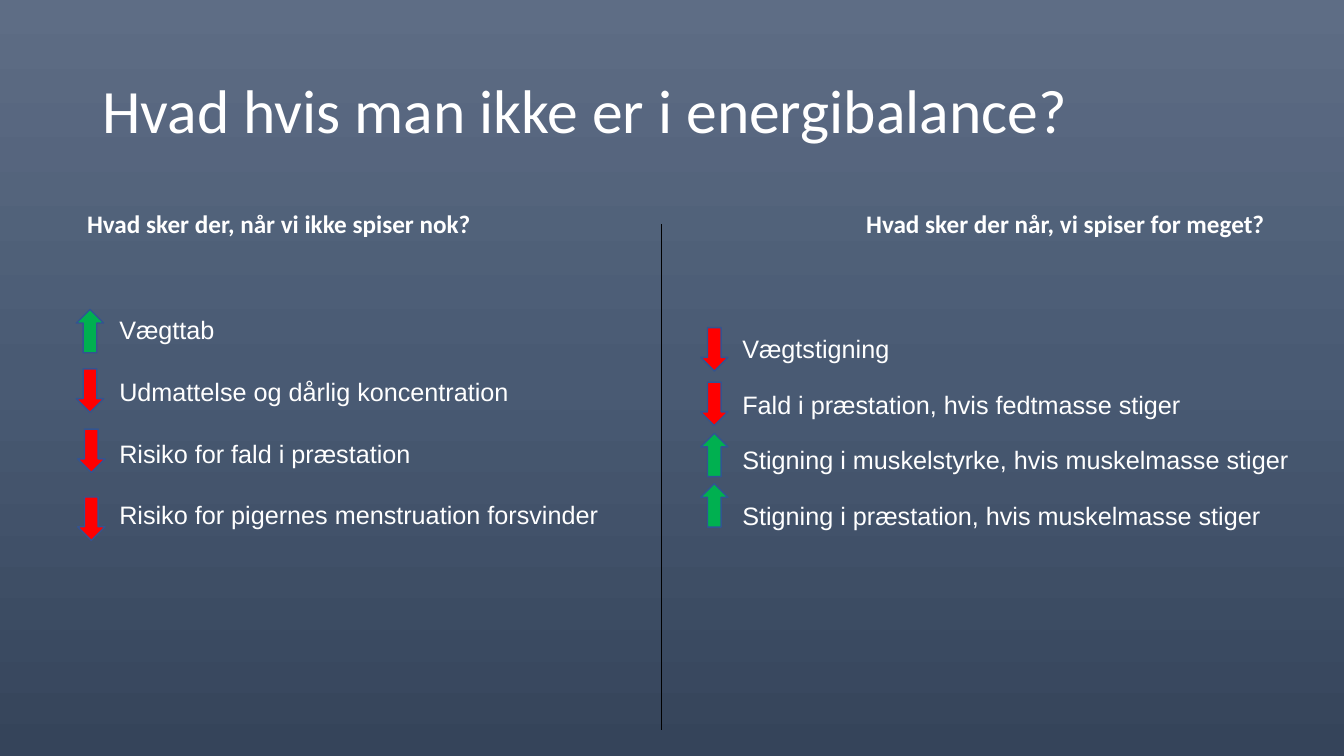
from copy import deepcopy

from lxml import etree
from pptx import Presentation
from pptx.dml.color import RGBColor
from pptx.enum import shapes, text
from pptx.oxml import ns
from pptx.util import Pt

WHITE = RGBColor(0xFF, 0xFF, 0xFF)
BLACK = RGBColor(0x00, 0x00, 0x00)
GREEN = RGBColor(0x00, 0xB0, 0x50)
RED = RGBColor(0xFF, 0x00, 0x00)
OUTLINE = RGBColor(0x32, 0x54, 0x91)
BACKGROUND = (
    RGBColor(0x5E, 0x6D, 0x85),
    RGBColor(0x49, 0x5A, 0x73),
    RGBColor(0x35, 0x44, 0x5A),
)
COMPARISON_LAYOUT = 4
INDENT = Pt(22.5)


def paint_background(page):
    fill = page.background.fill
    fill.gradient()
    fill.gradient_angle = 270
    stop_list = page.element.find(".//" + ns.qn("a:gsLst"))
    stop_list.insert(1, deepcopy(stop_list[0]))
    for index, (stop, color) in enumerate(zip(fill.gradient_stops, BACKGROUND)):
        stop.position = index / 2
        stop.color.rgb = color


def place(box, left, top, width, height, anchor, wrap=True):
    box.left, box.top, box.width, box.height = map(Pt, (left, top, width, height))
    frame = box.text_frame
    frame.auto_size = text.MSO_AUTO_SIZE.NONE
    frame.vertical_anchor = anchor
    frame.word_wrap = wrap
    return frame


def write(para, words, size, font_name, bold=False):
    para.alignment = text.PP_ALIGN.LEFT
    para.space_before = Pt(0)
    span = para.add_run()
    span.text = words
    span.font.size = Pt(size)
    span.font.name = font_name
    span.font.bold = bold
    span.font.color.rgb = WHITE


def add_heading(box, words, left, width):
    frame = place(box, left, 145.5, width, 29, text.MSO_ANCHOR.TOP, wrap=False)
    write(frame.paragraphs[0], words, 18, "Calibri", bold=True)


def add_list(box, items, bounds, gap, line_spacing):
    frame = place(box, *bounds, text.MSO_ANCHOR.TOP)
    for index, words in enumerate(items):
        para = frame.add_paragraph() if index else frame.paragraphs[0]
        properties = para._p.get_or_add_pPr()
        properties.set("marL", str(INDENT))
        properties.set("indent", str(-INDENT))
        write(para, words, 18, "Arial")
        para.line_spacing = line_spacing
        if index:
            para.space_before = Pt(gap)


def add_arrow(page, left, top, rising):
    arrow = page.shapes.add_shape(
        shapes.MSO_SHAPE.UP_ARROW, Pt(left), Pt(top), Pt(19.5), Pt(31))
    arrow.shadow.inherit = False
    arrow.rotation = 0 if rising else 180
    arrow.fill.solid()
    arrow.fill.fore_color.rgb = GREEN if rising else RED
    arrow.line.color.rgb = OUTLINE
    arrow.line.width = Pt(1)


def add_divider(page, x, top, bottom):
    line = page.shapes.add_connector(
        shapes.MSO_CONNECTOR.STRAIGHT, Pt(x), Pt(top), Pt(x), Pt(bottom))
    line.line.color.rgb = BLACK
    line.line.width = Pt(0.5)
    etree.SubElement(line._element.spPr, ns.qn("a:effectLst"))


def main():
    deck = Presentation()
    deck.slide_width, deck.slide_height = Pt(960), Pt(540)
    page = deck.slides.add_slide(deck.slide_layouts[COMPARISON_LAYOUT])
    paint_background(page)
    title, left_heading, left_list, right_heading, right_list = page.placeholders

    # Title
    frame = place(title, 66, 28.75, 828, 104.5, text.MSO_ANCHOR.MIDDLE)
    write(frame.paragraphs[0], "Hvad hvis man ikke er i energibalance?", 44, "Calibri")
    frame.paragraphs[0].line_spacing = 0.9

    # Column headings and divider
    add_heading(left_heading, "Hvad sker der, når vi ikke spiser nok?", 55, 291)
    add_heading(right_heading, "Hvad sker der når, vi spiser for meget?", 611.5, 302)
    add_divider(page, 472.5, 160, 521.5)

    # Eating too little
    add_list(left_list, (
        "Vægttab",
        "Udmattelse og dårlig koncentration",
        "Risiko for fald i præstation",
        "Risiko for pigernes menstruation forsvinder",
    ), (55.5, 221, 382.5, 181.5), 22.5, 1.0)

    # Eating too much
    add_list(right_list, (
        "Vægtstigning",
        "Fald i præstation, hvis fedtmasse stiger",
        "Stigning i muskelstyrke, hvis muskelmasse stiger",
        "Stigning i præstation, hvis muskelmasse stiger",
    ), (500.5, 237, 454, 144.5), 20.3, 0.9)

    # Arrows beside the list items
    for left, top, rising in (
        (54.5, 221, True), (54.5, 263.5, False),
        (55.5, 306.5, False), (55.5, 355, False),
        (500.5, 234, False), (500.5, 273, False),
        (500.5, 309.5, True), (500.5, 345.5, True),
    ):
        add_arrow(page, left, top, rising)

    deck.save("out.pptx")


if __name__ == "__main__":
    main()
